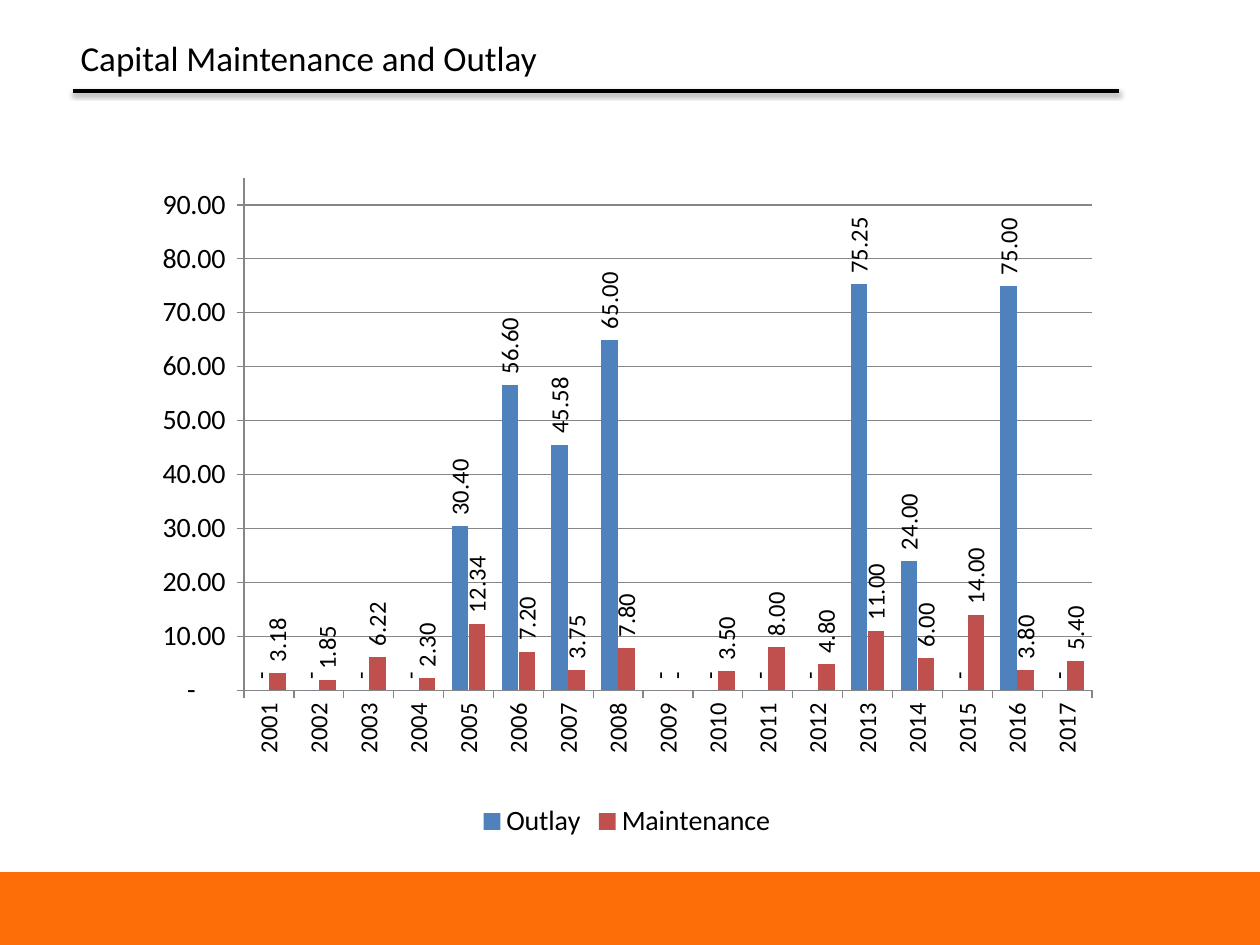
from lxml.etree import SubElement
from pptx import Presentation
from pptx.chart.data import CategoryChartData
from pptx.dml.color import RGBColor
from pptx.enum.chart import XL_CHART_TYPE, XL_LABEL_POSITION, XL_LEGEND_POSITION, XL_TICK_MARK
from pptx.enum.shapes import MSO_CONNECTOR, MSO_SHAPE
from pptx.enum.text import MSO_ANCHOR, PP_ALIGN
from pptx.oxml import parse_xml
from pptx.oxml.ns import nsdecls, qn
from pptx.util import Cm, Pt

FONT = "Calibri"
NUMBER_FORMAT = '_(* #,##0.00_);_(* \\(#,##0.00\\);_(* "-"??_);_(@_)'
YEARS = [str(year) for year in range(2001, 2018)]
SERIES = {
    "Outlay": ("4F81BD", [0, 0, 0, 0, 30.4, 56.6, 45.58, 65, 0, 0, 0, 0,
                          75.25, 24, 0, 75, 0]),
    "Maintenance": ("C0504D", [3.18, 1.85, 6.22, 2.3, 12.34, 7.2, 3.75, 7.8, 0,
                               3.5, 8, 4.8, 11, 6, 14, 3.8, 5.4]),
}


def color(value):
    return RGBColor.from_string(value)


def set_font(font, size):
    font.name = FONT
    font.size = Pt(size)
    font.bold = False
    font.color.rgb = color("000000")


def turn_upright(text_owner):
    """Rotate chart text so that it reads from bottom to top."""
    body = text_owner._element.find(qn("c:txPr")).find(qn("a:bodyPr"))
    body.set("rot", "-5400000")
    body.set("vert", "horz")


def add_footer_band(slide, left, top, width, height):
    band = slide.shapes.add_shape(MSO_SHAPE.RECTANGLE, left, top, width, height)
    band.shadow.inherit = False
    band.fill.solid()
    band.fill.fore_color.rgb = color("FD6D08")
    band.line.fill.background()


def add_heading(slide, left, top, width, height):
    """Place the title with a shadowed rule beneath it."""
    title = slide.shapes.title
    title.left, title.top, title.width, title.height = left, top, Cm(13.51), height
    frame = title.text_frame
    frame.text = "Capital Maintenance and Outlay"
    frame.vertical_anchor = MSO_ANCHOR.TOP
    paragraph = frame.paragraphs[0]
    paragraph.alignment = PP_ALIGN.LEFT
    set_font(paragraph.font, 20)

    rule_left, rule_top = left + Cm(0.1), top + Cm(1.22)
    rule = slide.shapes.add_connector(
        MSO_CONNECTOR.STRAIGHT, rule_left, rule_top, left + width, rule_top)
    rule.line.color.rgb = color("000000")
    rule.line.width = Pt(2)
    rule._element.spPr.append(parse_xml(
        f'<a:effectLst {nsdecls("a")}>'
        '<a:outerShdw blurRad="40000" dist="20000" dir="5400000" rotWithShape="0">'
        '<a:srgbClr val="000000"><a:alpha val="38000"/></a:srgbClr>'
        '</a:outerShdw></a:effectLst>'))


def set_plot_layout(chart, x, y, width, height):
    """Fix the inner plot area, in fractions of the chart."""
    plot_area = chart._chartSpace.chart.plotArea
    for layout in plot_area.findall(qn("c:layout")):
        plot_area.remove(layout)
    layout = parse_xml(f'<c:layout {nsdecls("c")}><c:manualLayout/></c:layout>')
    settings = {"layoutTarget": "inner", "xMode": "edge", "yMode": "edge",
                "x": x, "y": y, "w": width, "h": height}
    for name, value in settings.items():
        SubElement(layout[0], qn(f"c:{name}")).set("val", str(value))
    plot_area.insert(0, layout)


def format_axis(axis, size):
    axis.major_tick_mark = XL_TICK_MARK.OUTSIDE
    axis.minor_tick_mark = XL_TICK_MARK.NONE
    axis.format.line.color.rgb = color("868686")
    axis.format.line.width = Pt(0.75)
    set_font(axis.tick_labels.font, size)


def add_spending_chart(slide, left, top, width, height):
    data = CategoryChartData(number_format=NUMBER_FORMAT)
    data.categories = YEARS
    for name, (_, values) in SERIES.items():
        data.add_series(name, values)
    chart = slide.shapes.add_chart(
        XL_CHART_TYPE.COLUMN_CLUSTERED, left, top, width, height, data).chart
    set_font(chart.font, 18)
    chart.has_title = False
    set_plot_layout(chart, 0.13, 0.09, 0.82, 0.7)

    format_axis(chart.category_axis, 14)
    turn_upright(chart.category_axis)
    value_axis = chart.value_axis
    format_axis(value_axis, 16)
    value_axis.minimum_scale, value_axis.maximum_scale = 0, 95
    value_axis.major_unit = 10
    value_axis.tick_labels.number_format = NUMBER_FORMAT
    value_axis.tick_labels.number_format_is_linked = False
    value_axis.major_gridlines.format.line.color.rgb = color("868686")
    value_axis.major_gridlines.format.line.width = Pt(0.75)

    plot = chart.plots[0]
    plot.gap_width, plot.overlap = 97, -2
    plot.vary_by_categories = False
    for series in plot.series:
        series.format.fill.solid()
        series.format.fill.fore_color.rgb = color(SERIES[series.name][0])
        series.invert_if_negative = False
        labels = series.data_labels
        labels.show_value = True
        labels.number_format = NUMBER_FORMAT
        labels.number_format_is_linked = False
        labels.position = XL_LABEL_POSITION.OUTSIDE_END
        set_font(labels.font, 14)
        turn_upright(labels)

    chart.has_legend = True
    chart.legend.position = XL_LEGEND_POSITION.BOTTOM
    chart.legend.include_in_layout = False
    set_font(chart.legend.font, 16)


def main():
    presentation = Presentation()
    presentation.slide_width, presentation.slide_height = Cm(25.4), Cm(19.05)
    slide = presentation.slides.add_slide(presentation.slide_layouts[5])
    add_footer_band(slide, 0, Cm(17.58), presentation.slide_width, Cm(1.47))
    add_heading(slide, Cm(1.37), Cm(0.61), Cm(21.19), Cm(1.12))
    add_spending_chart(slide, Cm(2.21), Cm(2.26), Cm(20.85), Cm(14.76))
    presentation.save("out.pptx")


if __name__ == "__main__":
    main()
